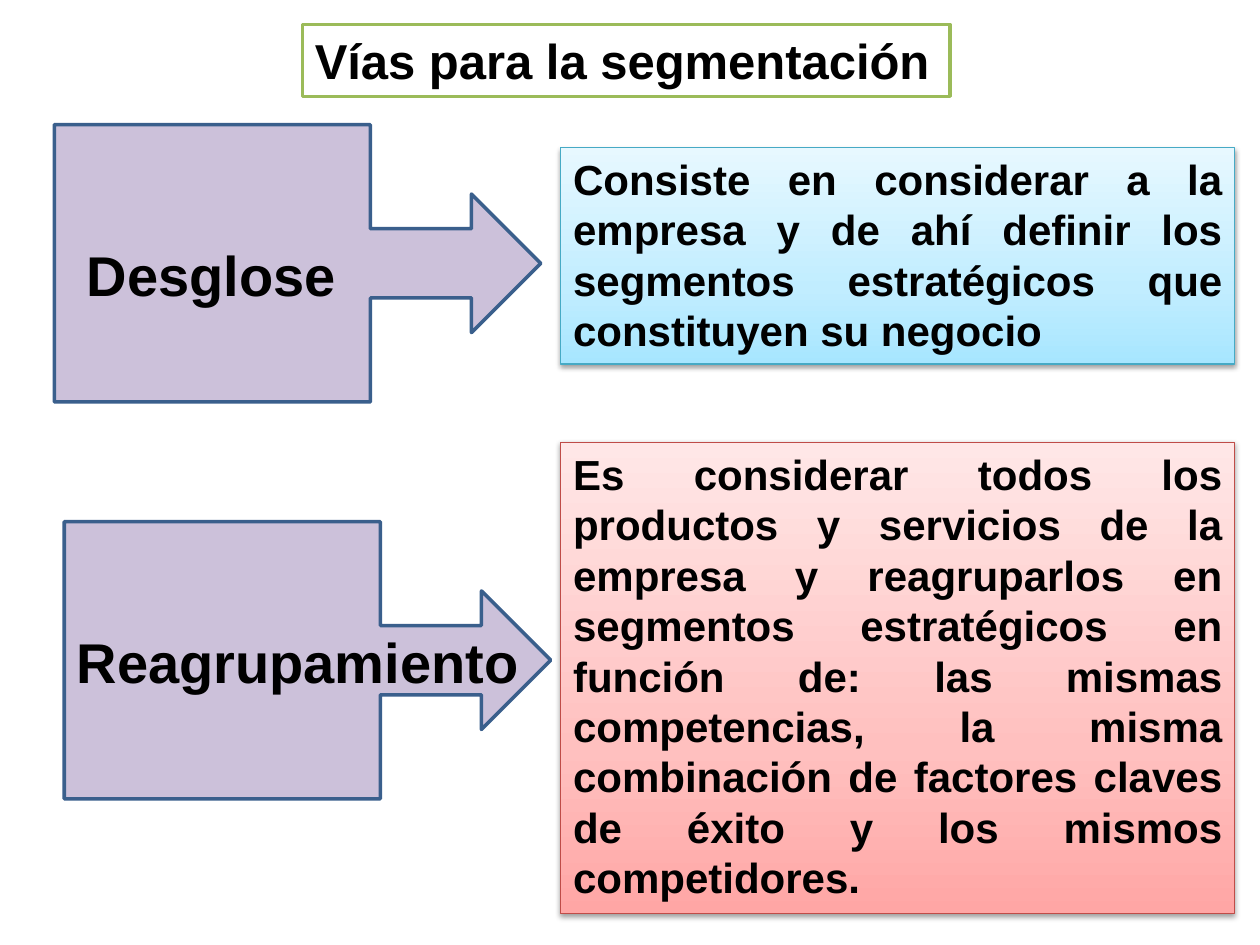
from lxml import etree
from pptx import Presentation
from pptx.dml.color import RGBColor
from pptx.enum.shapes import MSO_SHAPE
from pptx.enum.text import MSO_ANCHOR, MSO_AUTO_SIZE, PP_ALIGN
from pptx.oxml.ns import qn
from pptx.util import Pt

RECTANGLE = MSO_SHAPE.RECTANGLE
ARROW_CALLOUT = MSO_SHAPE.RIGHT_ARROW_CALLOUT
TOP = MSO_ANCHOR.TOP
GROW = MSO_AUTO_SIZE.SHAPE_TO_FIT_TEXT
LEFT, JUSTIFY = PP_ALIGN.LEFT, PP_ALIGN.JUSTIFY


def rgb(color):
    return RGBColor.from_string(color)


class SlideBuilder:
    font = "Arial"
    ink = "000000"
    callout_fill, callout_line = "CCC1DA", "3A5F8C"
    callout_size = (278, 158.4)
    panel_left, panel_width = 320.4, 385.2

    def __init__(self, slide):
        self.slide = slide

    def add_text(self, shape, runs, align=LEFT, wrap=False):
        """Fill the shape with one paragraph of (text, size, font, bold) runs."""
        frame = shape.text_frame
        frame.word_wrap = wrap
        frame.auto_size = GROW
        frame.vertical_anchor = TOP
        paragraph = frame.paragraphs[0]
        paragraph.alignment = align
        for text, size, font, bold in runs:
            run = paragraph.add_run()
            run.text = text
            run.font.size = Pt(size)
            run.font.name = font
            run.font.bold = bold
            run.font.color.rgb = rgb(self.ink)

    def shape(self, kind, left, top, width, height, line, weight, fill=None):
        shape = self.slide.shapes.add_shape(
            kind, Pt(left), Pt(top), Pt(width), Pt(height))
        shape.shadow.inherit = False
        shape.line.color.rgb = rgb(line)
        shape.line.width = Pt(weight)
        if fill:
            shape.fill.solid()
            shape.fill.fore_color.rgb = rgb(fill)
        return shape

    def callout(self, left, top):
        self.shape(ARROW_CALLOUT, left, top, *self.callout_size,
                   self.callout_line, 2, self.callout_fill)

    def title(self, text, left, top, width, height):
        box = self.shape(RECTANGLE, left, top, width, height, "9BBB59", 2, "FFFFFF")
        self.add_text(box, [(text, 28, self.font, True)])

    def label(self, runs, left, top, width, height):
        box = self.slide.shapes.add_textbox(Pt(left), Pt(top), Pt(width), Pt(height))
        self.add_text(box, runs)

    def panel(self, text, top, height, line, colors):
        panel = self.shape(RECTANGLE, self.panel_left, top,
                           self.panel_width, height, line, 0.75)
        self.gradient(panel, colors)
        self.drop_shadow(panel)
        self.add_text(panel, [(text, 24, self.font, True)], JUSTIFY, wrap=True)

    def gradient(self, shape, colors):
        """Three stops running from the bottom edge to the top edge."""
        shape.fill.gradient()
        shape.fill.gradient_angle = 90
        stops = shape.element.spPr.find(".//" + qn("a:gsLst"))
        for stop in list(stops):
            stops.remove(stop)
        for position, color in zip((0, 35000, 100000), colors):
            stop = etree.SubElement(stops, qn("a:gs"), pos=str(position))
            etree.SubElement(stop, qn("a:srgbClr"), val=color)

    def drop_shadow(self, shape):
        effects = shape.element.spPr.find(qn("a:effectLst"))
        shadow = etree.SubElement(
            effects, qn("a:outerShdw"), blurRad=str(Pt(3.1)), dist=str(Pt(1.6)),
            dir="5400000", rotWithShape="0")
        color = etree.SubElement(shadow, qn("a:srgbClr"), val=self.ink)
        etree.SubElement(color, qn("a:alpha"), val="38000")


def main():
    deck = Presentation()
    deck.slide_width, deck.slide_height = Pt(720), Pt(540)
    builder = SlideBuilder(deck.slides.add_slide(deck.slide_layouts[6]))

    builder.callout(31, 71.3)
    builder.callout(36.7, 298.1)
    builder.title("Vías para la segmentación", 172.8, 14.1, 370.1, 41)
    builder.label([("Desglose", 32, "Arial", True), (" ", 18, "DejaVu Sans", False)],
                  42.5, 133.9, 164.2, 46.1)
    builder.label([("Reagrupamiento", 32, "Arial", True)], 36.7, 355, 278, 46.1)
    builder.panel(
        "Consiste en considerar a la empresa y de ahí definir los segmentos "
        "estratégicos que constituyen su negocio",
        84.2, 123.8, "46AAC5", ("A7E6FF", "C1EDFF", "E7F8FF"))
    builder.panel(
        "Es considerar todos los productos y servicios de la empresa y "
        "reagruparlos en segmentos estratégicos en función de: las mismas "
        "competencias, la misma combinación de factores claves de éxito y los "
        "mismos competidores.",
        252.7, 269.3, "BF4C48", ("FFA6A5", "FFC0BF", "FFE7E7"))

    deck.save("out.pptx")


if __name__ == "__main__":
    main()
